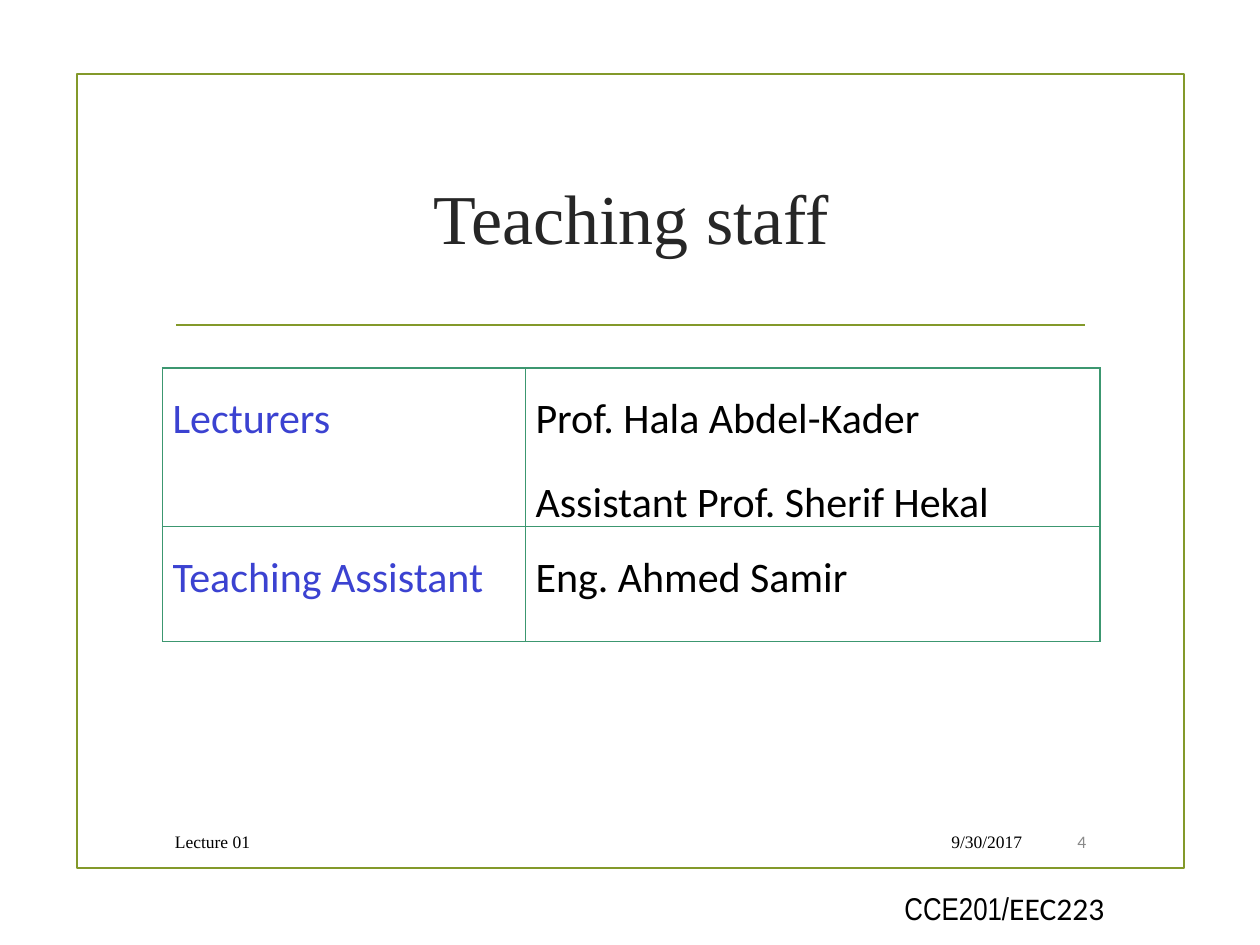
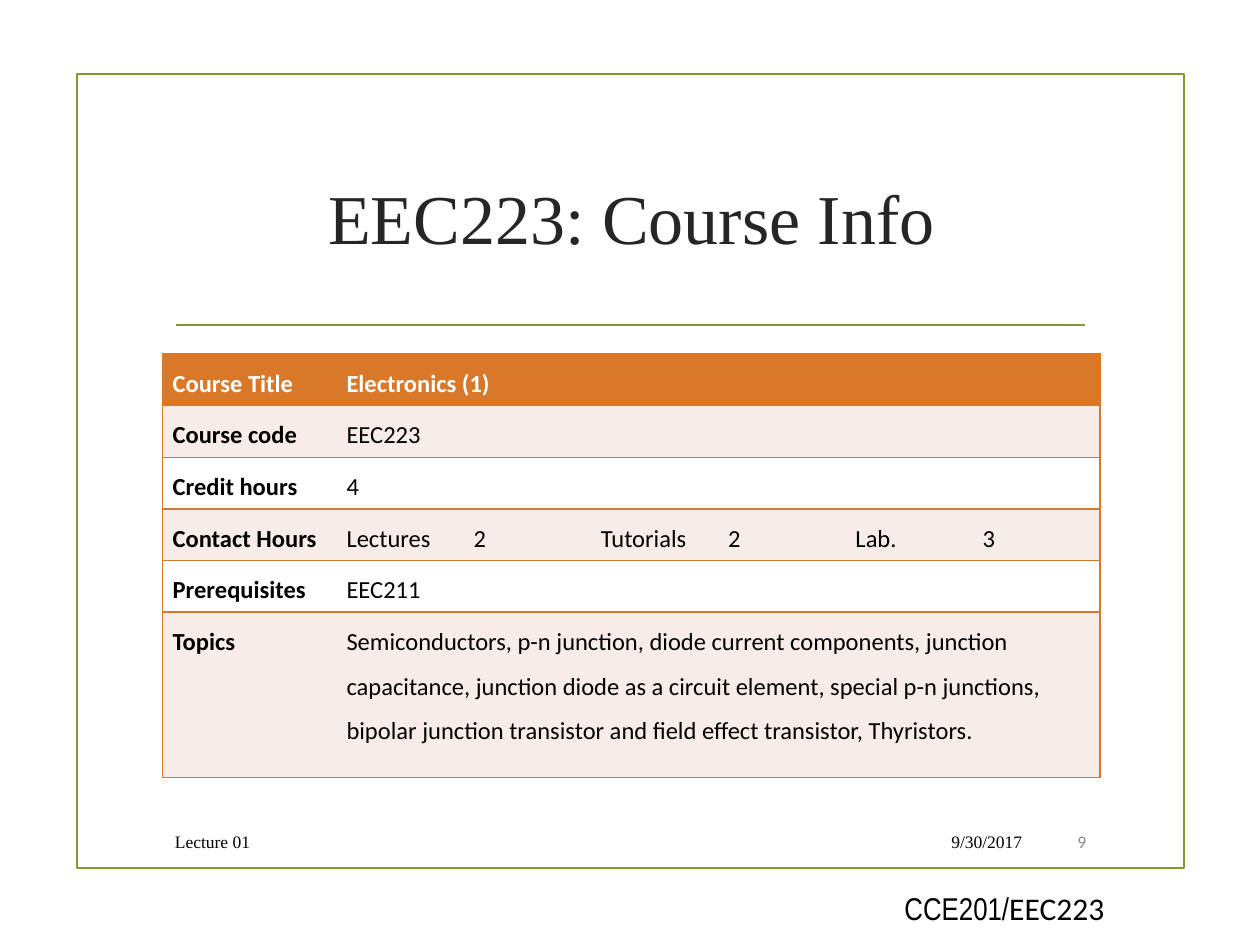
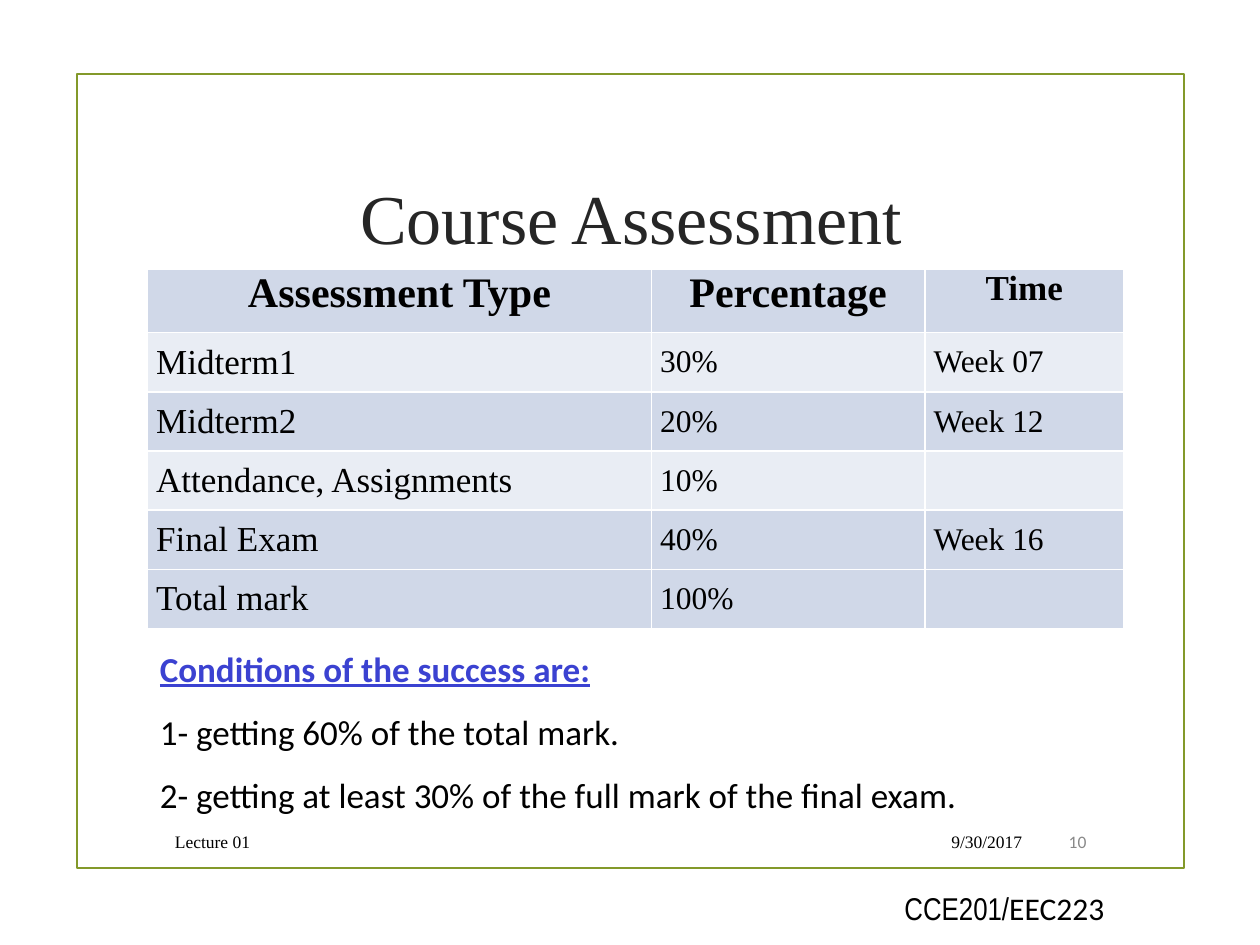
"""Build three course introduction slides with shared framing, titles and tables."""
from lxml.etree import SubElement
from pptx import Presentation
from pptx.dml.color import RGBColor
from pptx.enum.shapes import MSO_CONNECTOR as Connector, MSO_SHAPE as Shape
from pptx.enum.text import MSO_ANCHOR as Anchor, PP_ALIGN as Align
from pptx.oxml.ns import qn
from pptx.util import Inches, Pt

BLACK = RGBColor(0x00, 0x00, 0x00)
WHITE = RGBColor(0xFF, 0xFF, 0xFF)
TITLE_GRAY = RGBColor(0x26, 0x26, 0x26)
NUMBER_GRAY = RGBColor(0x89, 0x89, 0x89)
OLIVE = RGBColor(0x83, 0x99, 0x2A)
GREEN = RGBColor(0x3C, 0x97, 0x70)
BLUE = RGBColor(0x3B, 0x42, 0xD1)
ORANGE = RGBColor(0xD9, 0x78, 0x28)
PALE_ORANGE = RGBColor(0xF8, 0xEC, 0xE8)
BAND_DARK = RGBColor(0xD0, 0xD8, 0xE8)
BAND_LIGHT = RGBColor(0xE9, 0xED, 0xF4)

SERIF, SANS, NARROW = "Times New Roman", "Calibri", "Arial Narrow"
TITLE_PLACE = (1.29, 1, 7.44, 1.43)
FOOTER_TOP, FOOTER_HEIGHT = 6.52, 0.31
COURSE_CODES = [("CCE201/", NARROW), ("EEC223", SANS)]

STAFF = [
    ("Lecturers", ["Prof. Hala Abdel-Kader", "Assistant Prof. Sherif Hekal"]),
    ("Teaching Assistant", ["Eng. Ahmed Samir"]),
]
COURSE_INFO = [
    ("Course Title", ["Electronics (1)"]),
    ("Course code", ["EEC223"]),
    ("Credit hours", ["4"]),
    ("Contact Hours", ["Lectures", "2", "Tutorials", "2", "Lab.", "3"]),
    ("Prerequisites", ["EEC211"]),
    ("Topics", [[
        "Semiconductors, p-n junction, diode current components, junction "
        "capacitance, junction diode as a circuit element, special p-n junctions,",
        "bipolar junction transistor and field effect transistor, Thyristors.",
    ]]),
]
ASSESSMENT = [
    ("Assessment Type", "Percentage", "Time"),
    ("Midterm1", "30%", "Week 07"),
    ("Midterm2", "20%", "Week 12"),
    ("Attendance, Assignments", "10%", ""),
    ("Final Exam", "40%", "Week 16"),
    ("Total mark", "100%", ""),
]
CONDITIONS = [
    "Conditions of the success are:",
    "1- getting 60% of the total mark.",
    "2- getting at least 30% of the full mark of the final exam.",
]


def inches(values):
    return [Inches(value) for value in values]


def style_font(font, color=BLACK, **values):
    for name, value in values.items():
        setattr(font, name, value)
    font.color.rgb = color


def put_text(frame, lines, align=Align.LEFT, spacing=1.0, gap=0, **font):
    lines = [lines] if isinstance(lines, str) else lines
    for index, line in enumerate(lines):
        para = frame.paragraphs[0] if index == 0 else frame.add_paragraph()
        para.alignment, para.line_spacing = align, spacing
        if index and gap:
            para.space_before = Pt(gap)
        if line:
            span = para.add_run()
            span.text = line
            style_font(span.font, **font)


def add_box(page, place, lines, wrap=True, anchor=Anchor.MIDDLE, **style):
    frame = page.shapes.add_textbox(*inches(place)).text_frame
    frame.word_wrap, frame.vertical_anchor = wrap, anchor
    put_text(frame, lines, **style)
    return frame


def add_page(deck, title, number):
    page = deck.slides.add_slide(deck.slide_layouts[5])
    border = page.shapes.add_shape(Shape.RECTANGLE, *inches((0.61, 0.59, 8.79, 6.3)))
    border.shadow.inherit = False
    border.fill.background()
    rule = page.shapes.add_connector(
        Connector.STRAIGHT, *inches((1.4, 2.58, 8.61, 2.58)))
    SubElement(rule._element.spPr, qn("a:effectLst"))
    for outline in (border.line, rule.line):
        outline.color.rgb, outline.width = OLIVE, Pt(1.25)

    heading = page.shapes.title
    heading.left, heading.top, heading.width, heading.height = inches(TITLE_PLACE)
    heading.text_frame.vertical_anchor = Anchor.MIDDLE
    put_text(heading.text_frame, title, Align.CENTER,
             size=Pt(40), name=SERIF, color=TITLE_GRAY)

    codes = add_box(page, (7.08, 7.01, 1.81, 0.4), [""], False, Anchor.TOP)
    for text, name in COURSE_CODES:
        span = codes.paragraphs[0].add_run()
        span.text = text
        style_font(span.font, size=Pt(18), name=name)

    footers = [
        (1.29, 5.58, "Lecture 01", Align.LEFT, SERIF, BLACK),
        (6.95, 1.26, "9/30/2017", Align.RIGHT, SERIF, BLACK),
        (8.29, 0.43, str(number), Align.RIGHT, SANS, NUMBER_GRAY),
    ]
    for left, width, text, align, name, color in footers:
        add_box(page, (left, FOOTER_TOP, width, FOOTER_HEIGHT), text,
                align=align, size=Pt(10), name=name, color=color)
    return page


def add_grid(page, left, top, widths, heights):
    place = inches((left, top, sum(widths), sum(heights)))
    table = page.shapes.add_table(len(heights), len(widths), *place).table
    table.first_row = table.horz_banding = False
    for column, width in zip(table.columns, widths):
        column.width = Inches(width)
    for row, height in zip(table.rows, heights):
        row.height = Inches(height)
    return table


def format_cell(cell, fill, border, sides="LRTB", margin=0.08, anchor=Anchor.TOP):
    cell.margin_left = cell.margin_right = Inches(margin)
    cell.margin_top = cell.margin_bottom = 0
    cell.vertical_anchor = anchor
    properties = cell._tc.get_or_add_tcPr()
    for side in "LRTB":
        edge = SubElement(properties, qn(f"a:ln{side}"), w=str(Pt(1)))
        if side in sides:
            paint = SubElement(edge, qn("a:solidFill"))
            SubElement(paint, qn("a:srgbClr"), val=str(border))
        else:
            SubElement(edge, qn("a:noFill"))
    if fill is None:
        cell.fill.background()
    else:
        cell.fill.solid()
        cell.fill.fore_color.rgb = fill


def build_staff(deck):
    page = add_page(deck, "Teaching staff", 4)
    table = add_grid(page, 1.29, 2.92, [2.88, 4.56], [1.26, 0.91])
    for row, entry in enumerate(STAFF):
        for column, (lines, color) in enumerate(zip(entry, (BLUE, BLACK))):
            cell = table.cell(row, column)
            format_cell(cell, None, GREEN)
            put_text(cell.text_frame, lines, spacing=1.5, gap=4,
                     size=Pt(24), name=SANS, color=color)


def build_course_info(deck):
    page = add_page(deck, "EEC223: Course Info", 9)
    widths = [1.38] + [1.01] * 6
    table = add_grid(page, 1.29, 2.81, widths, [0.41] * 5 + [1.31])
    last = len(widths) - 1
    for row, (label, values) in enumerate(COURSE_INFO):
        fill = ORANGE if row == 0 else (PALE_ORANGE if row % 2 else WHITE)
        merged = len(values) == 1
        if merged:
            table.cell(row, 1).merge(table.cell(row, last))
        for column in range(last + 1):
            sides = "TB" + ("L" if column == 0 else "")
            if column == last or (merged and column):
                sides += "R"
            format_cell(table.cell(row, column), fill, ORANGE, sides)
        for column, lines in enumerate([label, *values]):
            put_text(table.cell(row, column).text_frame, lines, spacing=1.5,
                     size=Pt(14), name=SANS, bold=row == 0 or column == 0,
                     color=BLACK if row else WHITE)


def build_assessment(deck):
    page = add_page(deck, "Course Assessment", 10)
    table = add_grid(page, 1.17, 2.14, [4, 2.17, 1.58], [0.5] + [0.47] * 5)
    last = len(ASSESSMENT) - 1
    for row, entry in enumerate(ASSESSMENT):
        header = row == 0
        fill = BAND_DARK if row % 2 == 0 or row == last else BAND_LIGHT
        sizes = (24, 24, 20) if header else (20, 18, 18)
        for column, (text, size) in enumerate(zip(entry, sizes)):
            cell = table.cell(row, column)
            format_cell(cell, fill, WHITE, margin=0.07,
                        anchor=Anchor.TOP if header else Anchor.MIDDLE)
            put_text(cell.text_frame, text, Align.CENTER if header else Align.LEFT,
                     size=Pt(size), name=SERIF, bold=header)
    conditions = add_box(page, (1.17, 4.92, 6.6, 1.62), CONDITIONS, False,
                         Anchor.TOP, spacing=1.5, size=Pt(20), name=SANS)
    style_font(conditions.paragraphs[0].runs[0].font, BLUE, bold=True, underline=True)


def main():
    deck = Presentation()
    deck.slide_width, deck.slide_height = Inches(10), Inches(7.5)
    for build in (build_staff, build_course_info, build_assessment):
        build(deck)
    deck.save("out.pptx")


if __name__ == "__main__":
    main()
